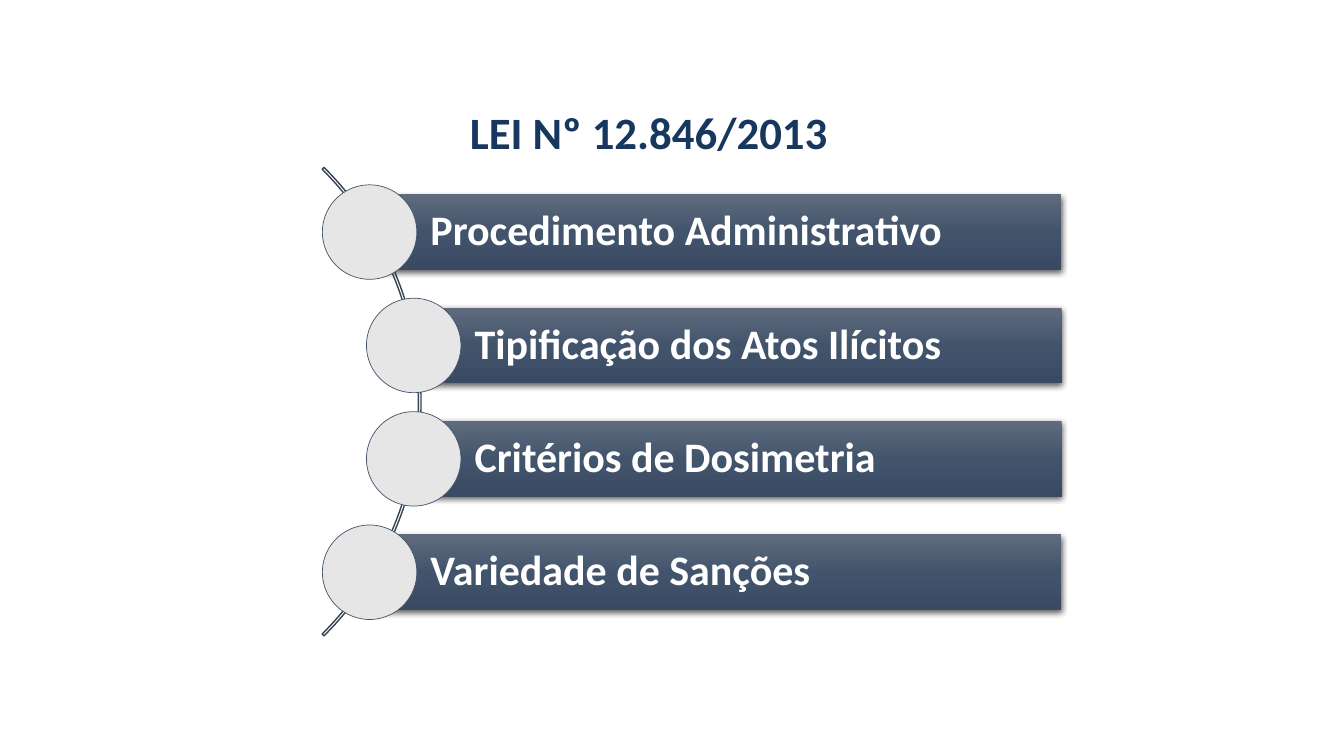
from lxml.etree import SubElement
from pptx import Presentation
from pptx.dml.color import RGBColor
from pptx.enum.shapes import MSO_SHAPE
from pptx.enum.text import MSO_ANCHOR, PP_ALIGN
from pptx.oxml import parse_xml
from pptx.oxml.ns import nsdecls, qn
from pptx.util import Pt

SCALE = 9525
WIDTH, HEIGHT = 1280, 720
NAVY = RGBColor(0x17, 0x37, 0x5E)
WHITE = RGBColor(0xFF, 0xFF, 0xFF)
BLACK = RGBColor(0x00, 0x00, 0x00)
SLATE = RGBColor(0x44, 0x54, 0x6A)
DARK_SLATE = RGBColor(0x36, 0x43, 0x55)
LIGHT_GRAY = RGBColor(0xE7, 0xE6, 0xE6)
BAR_TOP = RGBColor(0x60, 0x6B, 0x7D)
BAR_MIDDLE = RGBColor(0x42, 0x54, 0x6C)
BAR_BOTTOM = RGBColor(0x39, 0x4A, 0x62)

TITLE = "LEI Nº 12.846/2013"
TOPICS = [
    ("Procedimento Administrativo", 307),
    ("Tipificação dos Atos Ilícitos", 349),
    ("Critérios de Dosimetria", 349),
    ("Variedade de Sanções", 307),
]
FIRST_TOP, ROW_STEP = 176, 108
CIRCLE_SIZE, BAR_HEIGHT, BAR_RIGHT = 90, 72, 1011


def write_text(frame, text, size, color, align=PP_ALIGN.LEFT, spacing=1.0, insets=(10, 5, 10, 5)):
    frame.word_wrap = True
    frame.vertical_anchor = MSO_ANCHOR.MIDDLE
    frame.margin_left, frame.margin_top, frame.margin_right, frame.margin_bottom = (
        inset * SCALE for inset in insets
    )
    para = frame.paragraphs[0]
    para.alignment = align
    para.line_spacing = spacing
    span = para.add_run()
    span.text = text
    span.font.name = "Calibri"
    span.font.size = Pt(size)
    span.font.bold = True
    span.font.color.rgb = color


class TopicSlide:
    def __init__(self, deck):
        self.page = deck.slides.add_slide(deck.slide_layouts[6])

    def shape(self, kind, left, top, width, height, fill=None, line=None, weight=1):
        box = self.page.shapes.add_shape(kind, *(value * SCALE for value in (left, top, width, height)))
        box.shadow.inherit = False
        if fill is None:
            box.fill.background()
        else:
            box.fill.solid()
            box.fill.fore_color.rgb = fill
        if line is None:
            box.line.fill.background()
        else:
            box.line.color.rgb = line
            box.line.width = Pt(weight)
        return box

    def title(self, text, left, top, width, height):
        box = self.page.shapes.add_textbox(*(value * SCALE for value in (left, top, width, height)))
        write_text(box.text_frame, text, 32, NAVY, align=PP_ALIGN.CENTER)

    def arc(self, left, top, size):
        box = self.shape(MSO_SHAPE.BLOCK_ARC, left, top, size, size, line=DARK_SLATE)
        for index, value in enumerate((189, 27, 2.5 / size)):
            box.adjustments[index] = value

    def bar(self, text, left, top):
        box = self.shape(MSO_SHAPE.RECTANGLE, left, top, BAR_RIGHT - left, BAR_HEIGHT, fill=BAR_MIDDLE)
        self.shade(box)
        self.drop_shadow(box)
        write_text(box.text_frame, text, 30, WHITE, spacing=0.9, insets=(58, 8, 8, 8))

    def circle(self, left, top):
        self.shape(MSO_SHAPE.OVAL, left, top, CIRCLE_SIZE, CIRCLE_SIZE, fill=LIGHT_GRAY, line=SLATE, weight=0.5)

    def shade(self, box):
        stops = "".join(
            f'<a:gs pos="{place * 1000}"><a:srgbClr val="{color}"/></a:gs>'
            for place, color in ((0, BAR_TOP), (50, BAR_MIDDLE), (100, BAR_BOTTOM))
        )
        gradient = parse_xml(
            f'<a:gradFill {nsdecls("a")} rotWithShape="1"><a:gsLst>{stops}</a:gsLst>'
            '<a:lin ang="5400000" scaled="0"/></a:gradFill>'
        )
        properties = box.element.spPr
        properties.replace(properties.find(qn("a:solidFill")), gradient)

    def drop_shadow(self, box):
        effects = box.element.spPr.find(qn("a:effectLst"))
        shadow = SubElement(
            effects, qn("a:outerShdw"), blurRad=str(Pt(4.5)), dist=str(Pt(1.5)),
            dir="5400000", algn="ctr", rotWithShape="0",
        )
        color = SubElement(shadow, qn("a:srgbClr"), val=str(BLACK))
        SubElement(color, qn("a:alpha"), val="63000")


def main():
    deck = Presentation()
    deck.slide_width, deck.slide_height = WIDTH * SCALE, HEIGHT * SCALE
    slide = TopicSlide(deck)
    slide.title(TITLE, 217, 103, 802, 45)
    slide.arc(-230, 67, 631)
    for row, (topic, left) in enumerate(TOPICS):
        top = FIRST_TOP + row * ROW_STEP
        slide.bar(topic, left + CIRCLE_SIZE // 2, top + (CIRCLE_SIZE - BAR_HEIGHT) // 2)
        slide.circle(left, top)
    deck.save("out.pptx")


if __name__ == "__main__":
    main()
